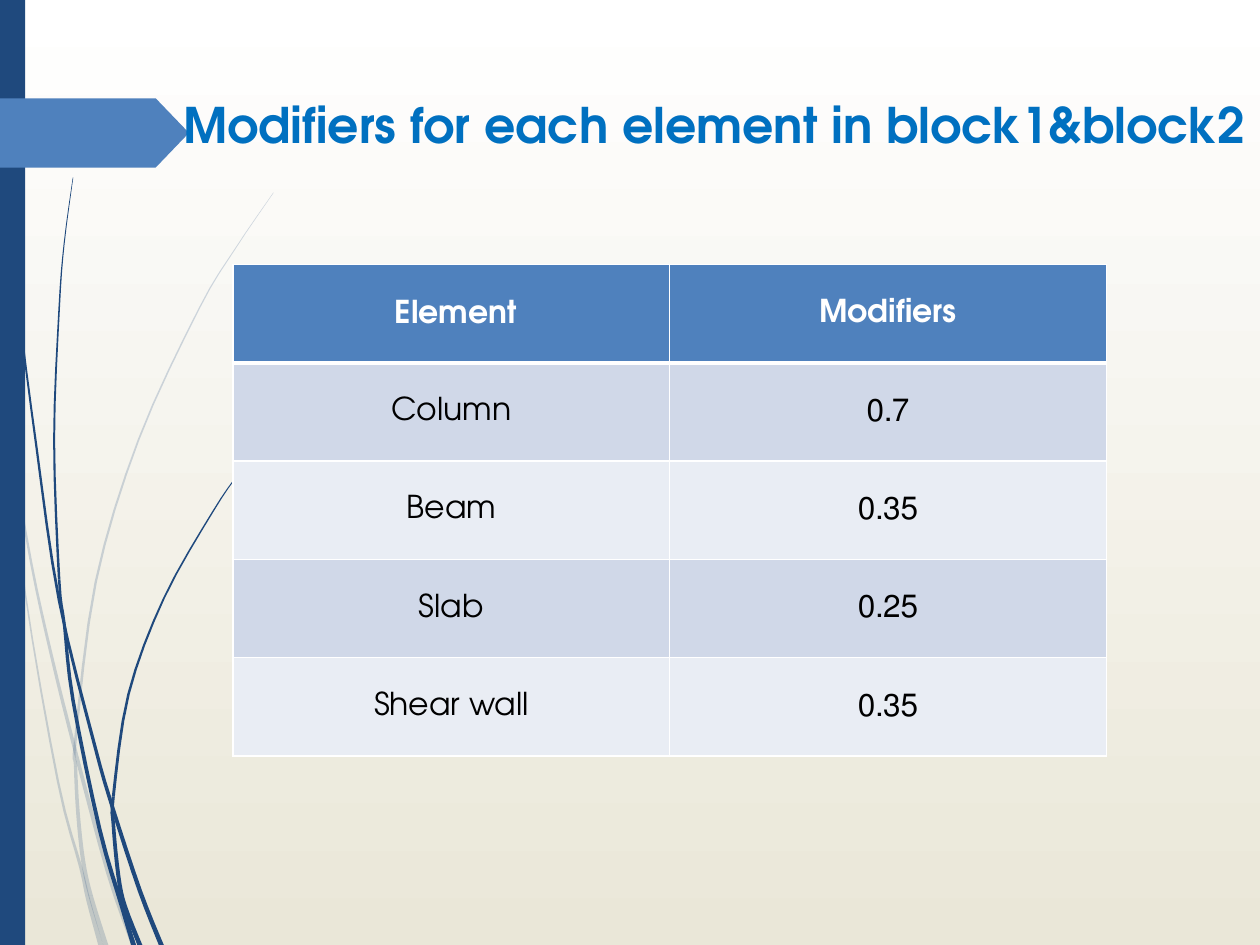
"""Build the slide listing stiffness modifiers per structural element."""
from lxml.etree import SubElement
from pptx import Presentation
from pptx.dml.color import RGBColor
from pptx.enum.shapes import MSO_SHAPE as Shape
from pptx.enum.text import MSO_ANCHOR as Anchor, PP_ALIGN as Align
from pptx.oxml.ns import qn
from pptx.util import Inches, Pt

TITLE = "Modifiers for each element in block1&block2"
ROWS = [
    ("Element ", "Modifiers"),
    ("Column", "0.7"),
    ("Beam", "0.35"),
    ("Slab", "0.25"),
    ("Shear wall", "0.35"),
]
FONT = "TeX Gyre Adventor"
NAVY = RGBColor(0x1F, 0x49, 0x7D)
BLUE = RGBColor(0x4F, 0x81, 0xBD)
TITLE_BLUE = RGBColor(0x00, 0x70, 0xC0)
BANDS = RGBColor(0xE9, 0xED, 0xF4), RGBColor(0xD0, 0xD8, 0xE8)
SAND = RGBColor(0xEA, 0xE7, 0xD8)
WHITE = RGBColor(0xFF, 0xFF, 0xFF)
BLACK = RGBColor(0, 0, 0)

PALE_STEMS = [
    [[(0, 2.9), (0.04, 3.22), (0.08, 3.5)],
     [(0.25, 4.48), (0.41, 5.21), (0.6, 5.97)],
     [(0.86, 6.93), (1.06, 7.5)]],
    [[(0.08, 3.5), (0.2, 4.7), (0.46, 6.2), (0.64, 6.88), (0.7, 7.14)],
     [(0.8, 7.5)]],
    [[(2.17, 1.53), (1.87, 1.97), (1.58, 2.45), (1.1, 3.49), (0.76, 4.62),
      (0.6, 5.86)],
     [(0.6, 6.08)],
     [(0.62, 6.46), (0.66, 6.83), (0.72, 7.11)],
     [(0.84, 7.5)]],
]
DARK_STEMS = [
    [[(0.02, 0), (0.06, 1.1), (0.14, 2.33), (0.29, 3.55), (0.47, 4.77)],
     [(0.75, 5.91), (0.9, 6.43)],
     [(1.11, 7.07), (1.28, 7.5)]],
    [[(0.58, 1.41), (0.51, 1.93), (0.47, 2.45), (0.43, 3.49), (0.47, 4.6)],
     [(0.51, 4.95)],
     [(0.58, 5.56), (0.79, 6.58), (0.97, 7.2)],
     [(1.06, 7.5)]],
    [[(2.16, 3.44), (1.91, 3.74), (1.69, 4.06), (1.3, 4.75), (1.02, 5.51),
      (0.9, 6.32)],
     [(0.9, 6.54)],
     [(0.94, 6.95), (0.99, 7.19)],
     [(1.11, 7.5)]],
]
STEM_WIDTH = 0.04
STEPS = 4


def smooth(points):
    ends = [points[0], *points, points[-1]]
    curve = []
    for a, b, c, d in zip(ends, ends[1:], ends[2:], ends[3:]):
        for step in range(STEPS):
            t = step / STEPS
            curve.append(tuple(
                q + t * (r - p) / 2
                + t * t * (2 * p - 5 * q + 4 * r - s) / 2
                + t ** 3 * (3 * q - p - 3 * r + s) / 2
                for p, q, r, s in zip(a, b, c, d)))
    return curve + [points[-1]]


def paint(shape, color):
    shape.fill.solid()
    shape.fill.fore_color.rgb = color
    shape.line.fill.background()
    shape.shadow.inherit = False


def add_stem(slide, sections, alpha):
    curve = smooth([point for section in sections for point in section])
    edges = []
    for i, (x, y) in enumerate(curve):
        half = STEM_WIDTH / 2 * (0.1 + 0.9 * i / (len(curve) - 1))
        edges.append([(Inches(x - half), Inches(y)),
                      (Inches(x + half), Inches(y))])
    start, knots = 0, -1
    for section in sections:
        knots += len(section)
        end = knots * STEPS
        left, right = zip(*edges[start:end + 1])
        outline = left + right[::-1]
        builder = slide.shapes.build_freeform(*outline[0])
        builder.add_line_segments(outline[1:], close=True)
        blade = builder.convert_to_shape()
        paint(blade, NAVY)
        color = blade._element.spPr.find(qn("a:solidFill"))[0]
        SubElement(color, qn("a:alpha"), val=str(alpha * 1000))
        start = end


def style_text(frame, size, color, bold):
    paragraph = frame.paragraphs[0]
    paragraph.alignment = Align.CENTER
    paragraph._p.get_or_add_pPr().set("rtl", "1")
    for font in (paragraph.font, paragraph.runs[0].font):
        font.name, font.size, font.bold = FONT, Pt(size), bold
        font.color.rgb = color


def add_borders(cell, bottom):
    properties = cell._tc.get_or_add_tcPr()
    for index, (side, width) in enumerate(
            [("L", 1), ("R", 1), ("T", 1), ("B", bottom)]):
        line = properties.makeelement(qn(f"a:ln{side}"), {"w": str(Pt(width))})
        fill = SubElement(line, qn("a:solidFill"))
        SubElement(fill, qn("a:srgbClr"), val=str(WHITE))
        properties.insert(index, line)


def add_modifiers(slide):
    table = slide.shapes.add_table(
        len(ROWS), len(ROWS[0]), Inches(1.85), Inches(2.1),
        Inches(6.93), Inches(3.9)).table
    for r, row in enumerate(ROWS):
        header = r == 0
        for c, text in enumerate(row):
            cell = table.cell(r, c)
            cell.text = text
            cell.vertical_anchor = Anchor.MIDDLE
            cell.fill.solid()
            cell.fill.fore_color.rgb = BLUE if header else BANDS[r % 2]
            style_text(cell.text_frame, 18, WHITE if header else BLACK, header)
            add_borders(cell, 3 if header else 1)


def main():
    deck = Presentation()
    deck.slide_width, deck.slide_height = Inches(10), Inches(7.5)
    slide = deck.slides.add_slide(deck.slide_layouts[5])
    backdrop = slide.background.fill
    backdrop.gradient()
    backdrop.gradient_angle = 270
    for stop, position, color in zip(
            backdrop.gradient_stops, (0, 1), (WHITE, SAND)):
        stop.position, stop.color.rgb = position, color

    for stems, alpha in ((PALE_STEMS, 20), (DARK_STEMS, 100)):
        for sections in stems:
            add_stem(slide, sections, alpha)
    side_bar = slide.shapes.add_shape(
        Shape.RECTANGLE, 0, 0, Inches(0.2), deck.slide_height)
    paint(side_bar, NAVY)
    pointer = slide.shapes.add_shape(
        Shape.PENTAGON, 0, Inches(0.78), Inches(1.5), Inches(0.55))
    pointer.adjustments[0] = 0.48
    paint(pointer, BLUE)

    title = slide.shapes.title
    title.left, title.top = Inches(0.75), Inches(0.7)
    title.width, title.height = Inches(9.83), Inches(1.41)
    title.text_frame.text = TITLE
    title.text_frame.vertical_anchor = Anchor.TOP
    style_text(title.text_frame, 28, TITLE_BLUE, True)
    slide.shapes._spTree.append(title._element)
    add_modifiers(slide)
    deck.save("out.pptx")


if __name__ == "__main__":
    main()
